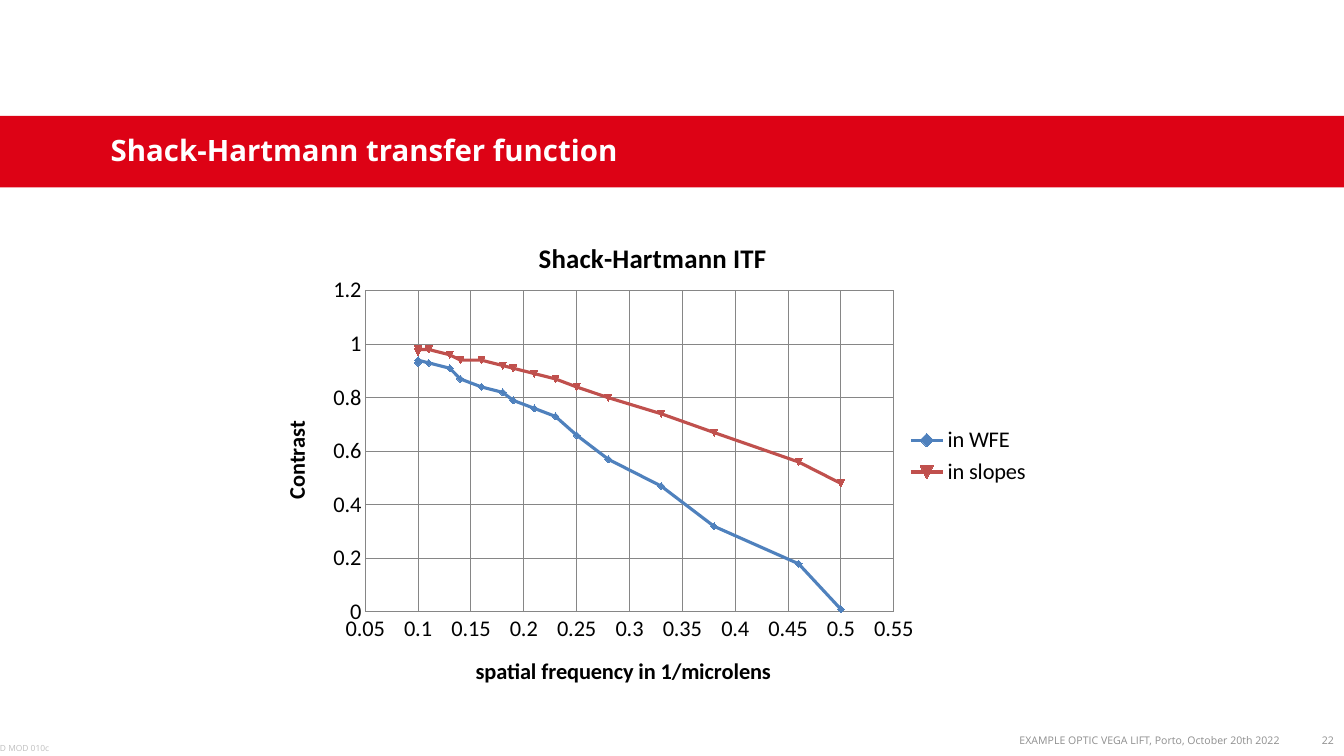
import pptx
import pptx.chart.data
import pptx.dml.color
import pptx.enum.chart
import pptx.enum.shapes
import pptx.enum.text
import pptx.util
from lxml import etree
from pptx.util import Inches

THEME = {
    "band": "DD0215", "heading": "FFFFFF", "footer": "8E8E8E", "code": "BFBFBF",
    "ink": "000000", "grid": "868686", "wfe": "4F81BD", "slopes": "C0504D",
    "text_font": "Open Sans", "chart_font": "Calibri",
    "heading_pt": 21, "footer_pt": 7.5, "code_pt": 6, "chart_pt": 16, "title_pt": 19.2,
}
ALIGN = pptx.enum.text.PP_ALIGN


def color(name):
    return pptx.dml.color.RGBColor.from_string(THEME[name])


def style_font(font, ink, size, face, bold=False):
    values = {"size": pptx.util.Pt(THEME[size]), "name": THEME[face], "bold": bold}
    for attribute, value in values.items():
        setattr(font, attribute, value)
    font.color.rgb = color(ink)


deck = pptx.Presentation()
deck.slide_width, deck.slide_height = Inches(13.33), Inches(7.5)
slide = deck.slides.add_slide(deck.slide_layouts[6])

# Red heading band
band = slide.shapes.add_shape(
    pptx.enum.shapes.MSO_SHAPE.RECTANGLE, 0, Inches(1.15), deck.slide_width, Inches(0.71))
band.shadow.inherit = False
band.fill.solid()
band.fill.fore_color.rgb = color("band")
band.line.fill.background()

# Heading, footer, page number and document code
texts = [
    ("Shack-Hartmann transfer function", (1, 1.26, 9.9, 0.45), (0.1, 0.05),
     "heading", ALIGN.LEFT, True),
    ("EXAMPLE OPTIC VEGA LIFT, Porto, October 20th 2022", (6.79, 7.23, 6, 0.23), (0.1, 0.05),
     "footer", ALIGN.RIGHT, False),
    ("22", (12.83, 7.23, 0.5, 0.23), (0.1, 0.05), "footer", ALIGN.RIGHT, False),
    ("D MOD 010c", (0, 7.37, 3.67, 0.1), (0, 0), "code", ALIGN.LEFT, False),
]
for wording, place, (side, edge), role, align, bold in texts:
    frame = slide.shapes.add_textbox(*map(Inches, place)).text_frame
    settings = {
        "word_wrap": True,
        "margin_left": Inches(side), "margin_right": Inches(side),
        "margin_top": Inches(edge), "margin_bottom": Inches(edge),
    }
    for attribute, value in settings.items():
        setattr(frame, attribute, value)
    line = frame.paragraphs[0]
    line.text = wording
    line.alignment = align
    style_font(line.runs[0].font, role, role + "_pt", "text_font", bold)

# Contrast against spatial frequency
frequencies = [0.5, 0.46, 0.38, 0.33, 0.28, 0.25, 0.23, 0.21,
               0.19, 0.18, 0.16, 0.14, 0.13, 0.11, 0.1, 0.1]
contrasts = {
    "in WFE": [0.01, 0.18, 0.32, 0.47, 0.57, 0.66, 0.73, 0.76,
               0.79, 0.82, 0.84, 0.87, 0.91, 0.93, 0.94, 0.93],
    "in slopes": [0.48, 0.56, 0.67, 0.74, 0.8, 0.84, 0.87, 0.89,
                  0.91, 0.92, 0.94, 0.94, 0.96, 0.98, 0.98, 0.97],
}
itf_data = pptx.chart.data.XyChartData()
for name, values in contrasts.items():
    curve = itf_data.add_series(name)
    for frequency, contrast in zip(frequencies, values):
        curve.add_data_point(frequency, contrast)
itf = slide.shapes.add_chart(
    pptx.enum.chart.XL_CHART_TYPE.XY_SCATTER_LINES,
    Inches(2.62), Inches(2.18), Inches(7.71), Inches(4.69), itf_data).chart
style_font(itf.font, "ink", "chart_pt", "chart_font")
itf.plots[0].vary_by_categories = False

# Curves and markers
for curve, ink in zip(itf.plots[0].series, ("wfe", "slopes")):
    curve.format.line.width = pptx.util.Pt(2.25)
    curve.format.line.color.rgb = color(ink)
    curve.marker.size = 5
    curve.marker.format.fill.solid()
    curve.marker.format.fill.fore_color.rgb = color(ink)
    curve.marker.format.line.color.rgb = color(ink)

# Chart title and legend
itf.has_title = True
itf.chart_title.include_in_layout = False
itf.has_legend = True
itf.legend.position = pptx.enum.chart.XL_LEGEND_POSITION.RIGHT
itf.legend.include_in_layout = False
style_font(itf.legend.font, "ink", "chart_pt", "chart_font")

# Axes
axes = [
    (itf.category_axis, "spatial frequency in 1/microlens", 0.05, 0.55, 0.05),
    (itf.value_axis, "Contrast", 0, 1.2, 0.2),
]
titles = [(itf.chart_title, "Shack-Hartmann ITF", "title_pt")]
for axis, caption, low, high, step in axes:
    scale = {
        "minimum_scale": low, "maximum_scale": high, "major_unit": step,
        "has_major_gridlines": True,
        "major_tick_mark": pptx.enum.chart.XL_TICK_MARK.NONE,
        "minor_tick_mark": pptx.enum.chart.XL_TICK_MARK.NONE,
    }
    for attribute, value in scale.items():
        setattr(axis, attribute, value)
    for rule in (axis.format.line, axis.major_gridlines.format.line):
        rule.color.rgb = color("grid")
        rule.width = pptx.util.Pt(0.75)
    style_font(axis.tick_labels.font, "ink", "chart_pt", "chart_font")
    titles.append((axis.axis_title, caption, "chart_pt"))
for title, wording, size in titles:
    title.text_frame.text = wording
    style_font(title.text_frame.paragraphs[0].runs[0].font, "ink", size, "chart_font", True)

# Inner plot area as fractions of the chart
plot_area = itf.plots[0]._element.getparent()
namespace = etree.QName(plot_area).namespace
for old in plot_area.findall(f"{{{namespace}}}layout"):
    plot_area.remove(old)
layout = etree.Element(f"{{{namespace}}}layout")
manual = etree.SubElement(layout, f"{{{namespace}}}manualLayout")
placing = {"layoutTarget": "inner", "xMode": "edge", "yMode": "edge",
           "x": 0.13, "y": 0.15, "w": 0.68, "h": 0.68}
for tag, value in placing.items():
    etree.SubElement(manual, f"{{{namespace}}}{tag}").set("val", str(value))
plot_area.insert(0, layout)

deck.save("out.pptx")
